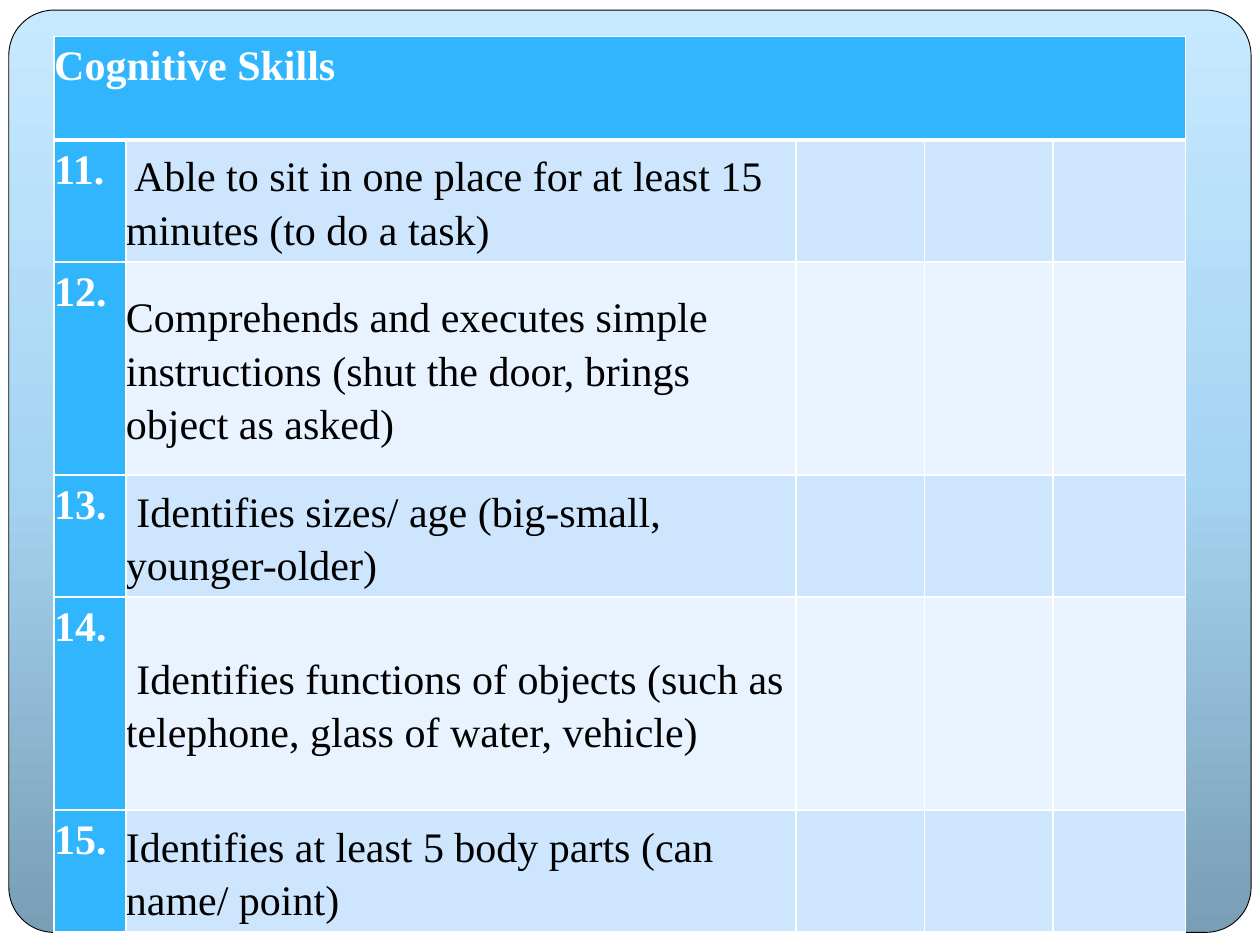
from dataclasses import dataclass

from copy import deepcopy

from pptx import Presentation
from pptx.dml.color import RGBColor as RGB
from pptx.enum.shapes import MSO_SHAPE as SHAPE
from pptx.enum.text import MSO_ANCHOR as ANCHOR
from pptx.oxml import parse_xml
from pptx.oxml.ns import nsdecls, qn
from pptx.util import Inches, Pt


@dataclass(frozen=True)
class Theme:
    """Colours, font and type size of the slide."""
    font: str = "Times New Roman"
    size: float = 24
    spacing: float = 1.15
    accent: str = "31B6FD"
    bands: tuple = ("CEE5FE", "E8F3FF")
    gradient: tuple = ("799EB5", "A6D5F2", "C7E9FF")
    white: str = "FFFFFF"
    black: str = "000000"


class Builder:
    """Draws elements on the current slide in one style."""

    def __init__(self, prs, theme):
        """Add a blank slide with a plain background."""
        self.t = theme
        self.s = prs.slides.add_slide(prs.slide_layouts[6])
        fill = self.s.background.fill
        fill.solid()
        fill.fore_color.rgb = RGB.from_string(theme.white)

    def panel(self, x, y, w, h, radius):
        """Draw the rounded panel with its three-stop gradient."""
        sp = self.s.shapes.add_shape(SHAPE.ROUNDED_RECTANGLE, Inches(x), Inches(y), Inches(w), Inches(h))
        sp.adjustments[0] = radius
        sp.shadow.inherit = False
        sp.line.color.rgb = RGB.from_string(self.t.black)
        sp.line.width = Pt(0.5)
        sp.fill.gradient()
        sp.fill.gradient_angle = 90
        stops = sp._element.spPr.find(".//" + qn("a:gsLst"))
        stops.insert(1, deepcopy(stops[0]))
        for i, (stop, color) in enumerate(zip(sp.fill.gradient_stops, self.t.gradient)):
            stop.position = i / 2
            stop.color.rgb = RGB.from_string(color)

    def borders(self, cell, top=1, bottom=1):
        """Give a cell white borders, with widths in points."""
        tc_pr = cell._tc.get_or_add_tcPr()
        for i, (side, width) in enumerate(zip("LRTB", (1, 1, top, bottom))):
            tc_pr.insert(i, parse_xml(
                f'<a:ln{side} {nsdecls("a")} w="{Pt(width)}"><a:solidFill>'
                f'<a:srgbClr val="{self.t.white}"/></a:solidFill></a:ln{side}>'))

    def text(self, cell, text, color, bold, anchor=ANCHOR.TOP):
        """Write one paragraph in a cell without margins."""
        cell.margin_left = cell.margin_right = cell.margin_top = cell.margin_bottom = 0
        cell.vertical_anchor = anchor
        p = cell.text_frame.paragraphs[0]
        p.text = text
        p.line_spacing = self.t.spacing
        p.font.name = self.t.font
        p.font.size = Pt(self.t.size)
        p.font.bold = bold
        p.font.color.rgb = RGB.from_string(color)

    def checklist(self, x, y, widths, heights, title, first, skills):
        """Draw a titled table of numbered skills with empty mark columns."""
        tbl = self.s.shapes.add_table(len(heights), len(widths), Inches(x), Inches(y),
                                      Inches(sum(widths)), Inches(sum(heights))).table
        for col, w in zip(tbl.columns, widths):
            col.width = Inches(w)
        for row, h in zip(tbl.rows, heights):
            row.height = Inches(h)
        for r, row in enumerate(tbl.rows):
            for c, cell in enumerate(row.cells):
                self.borders(cell, top=3 if r == 1 else 1, bottom=3 if r == 0 else 1)
                color = self.t.accent if r == 0 or c == 0 else self.t.bands[(r - 1) % 2]
                cell.fill.solid()
                cell.fill.fore_color.rgb = RGB.from_string(color)
        tbl.cell(0, 0).merge(tbl.cell(0, len(widths) - 1))
        self.text(tbl.cell(0, 0), title, self.t.white, True)
        for r, skill in enumerate(skills, 1):
            self.text(tbl.cell(r, 0), f"{first + r - 1}.", self.t.white, True)
            self.text(tbl.cell(r, 1), skill, self.t.black, False, ANCHOR.MIDDLE)


def main():
    """Build the slide and save it."""
    prs = Presentation()
    prs.slide_width, prs.slide_height = Inches(10), Inches(7.5)
    b = Builder(prs, Theme())
    b.panel(0.07, 0.08, 9.86, 7.32, 0.049)
    skills = [
        " Able to sit in one place for at least 15 minutes (to do a task)",
        "Comprehends and executes simple instructions (shut the door, brings object as asked)",
        " Identifies sizes/ age (big-small, younger-older)",
        " Identifies functions of objects (such as telephone, glass of water, vehicle)",
        "Identifies at least 5 body parts (can name/ point)",
    ]
    b.checklist(0.43, 0.29, [0.57, 5.32, 1.02, 1.02, 1.05], [0.82, 0.97, 1.69, 0.97, 1.69, 0.97],
                "Cognitive Skills", 11, skills)
    prs.save("out.pptx")


if __name__ == "__main__":
    main()
